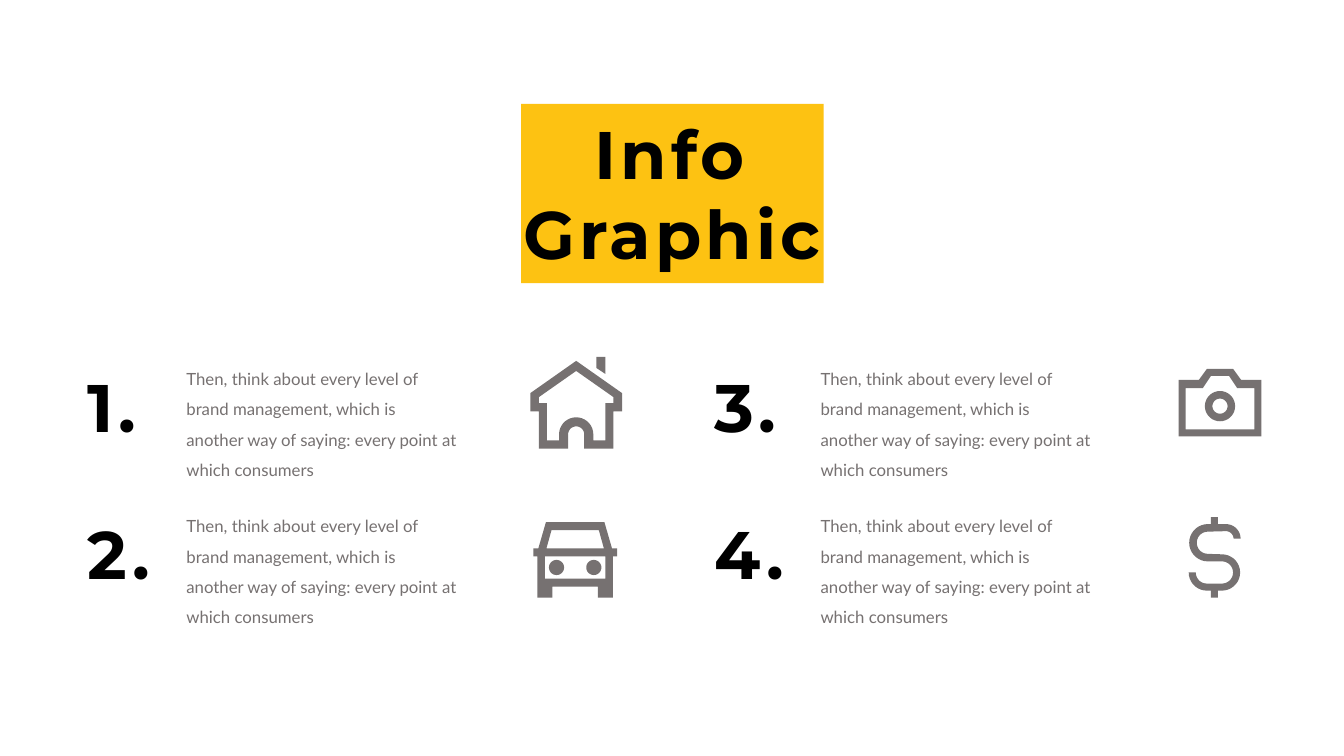
import math
from dataclasses import dataclass

from pptx import Presentation
from pptx import util as u
from pptx.dml.color import RGBColor
from pptx.enum import shapes, text

Point = tuple[float, float]
Contour = list[Point]


@dataclass(frozen=True)
class Theme:
    black: str = "000000"
    grey: str = "767171"
    yellow: str = "FDC212"
    heading_font: str = "Montserrat"
    body_font: str = "Lato"
    heading_size: int = 48
    body_size: int = 12
    heading_tracking: int = 300  # hundredths of a point


@dataclass(frozen=True)
class Icon:
    center_x: float
    top: float
    contours: list[Contour]  # relative to the centre of the top edge


@dataclass(frozen=True)
class Entry:
    label: str
    column: int
    row: int
    label_width: float
    icon: Icon


THEME = Theme()
BODY = ("Then, think about every level of brand management, which is "
        "another way of saying: every point at which consumers")
LABEL_LEFTS = (0.77, 6.99)
BODY_LEFTS = (1.75, 8.04)
LABEL_TOP, BODY_TOP, ROW_STEP = 3.57, 3.51, 1.46


# Outline helpers
def arc(x: float, y: float, radius: float, start: int, end: int) -> Contour:
    steps = max(abs(end - start) // 10, 1)
    angles = [math.radians(start + (end - start) * step / steps) for step in range(steps + 1)]
    return [(x + radius * math.cos(a), y + radius * math.sin(a)) for a in angles]


def circle(x: float, y: float, radius: float) -> Contour:
    return arc(x, y, radius, 0, 360)


def mirrored(right_half: Contour) -> Contour:
    return right_half + [(-x, y) for x, y in reversed(right_half)]


# Icons
HOUSE = Icon(5.715, 3.54, [
    [(0.2, 0), (0.2, 0.11), (0.29, 0.17), (0.29, 0)],
    mirrored([(0, 0.14), (0.37, 0.4), (0.37, 0.46), (0.29, 0.46), (0.29, 0.83), (0.17, 0.83),
              *arc(0, 0.77, 0.17, 0, -90)]),
    mirrored([(0, 0.04), (0.455, 0.36), (0.455, 0.54), (0.37, 0.54), (0.37, 0.91), (0.08, 0.91),
              *arc(0, 0.77, 0.08, 0, -90)]),
])
CAR = Icon(5.705, 5.18, [
    mirrored([(0.235, 0.08), (0.285, 0.26)]),
    circle(-0.185, 0.45, 0.075),
    circle(0.185, 0.45, 0.075),
    mirrored([(0.3, 0.34), (0.3, 0.56)]),
    mirrored([(0.29, 0), (0.365, 0.26), (0.415, 0.26), (0.415, 0.34), (0.375, 0.34),
              (0.375, 0.75), (0.225, 0.75), (0.225, 0.64)]),
])
CAMERA = Icon(12.1, 3.66, [
    circle(0, 0.37, 0.075),
    circle(0, 0.37, 0.15),
    mirrored([(0.09, 0.07), (0.17, 0.19), (0.34, 0.19), (0.34, 0.6)]),
    mirrored([(0.13, 0), (0.21, 0.11), (0.41, 0.11), (0.41, 0.67)]),
])
DOLLAR = Icon(12.045, 5.13, [[
    (-0.035, 0), (-0.035, 0.07),
    *arc(-0.065, 0.255, 0.185, -90, -270),
    *arc(0.075, 0.55, 0.11, -90, 90),
    *arc(-0.075, 0.55, 0.11, 90, 180),
    *arc(-0.075, 0.55, 0.18, 180, 90),
    (-0.035, 0.73), (-0.035, 0.8), (0.035, 0.8), (0.035, 0.73),
    *arc(0.075, 0.55, 0.18, 90, -90),
    *arc(-0.065, 0.255, 0.11, 90, 270),
    *arc(0.115, 0.215, 0.075, -90, 0),
    *arc(0.115, 0.215, 0.145, 0, -90),
    (0.035, 0.07), (0.035, 0),
]])

ENTRIES = [
    Entry("1.", 0, 0, 0.89, HOUSE),
    Entry("2.", 0, 1, 1.12, CAR),
    Entry("3.", 1, 0, 1.05, CAMERA),
    Entry("4.", 1, 1, 1.12, DOLLAR),
]


# Drawing functions
def paint(shape, color: str) -> None:
    shape.shadow.inherit = False
    shape.fill.solid()
    shape.fill.fore_color.rgb = RGBColor.from_string(color)
    shape.line.fill.background()


def write(shape, content: str, heading: bool) -> None:
    frame = shape.text_frame
    frame.text = content
    frame.word_wrap = True
    frame.auto_size = text.MSO_AUTO_SIZE.SHAPE_TO_FIT_TEXT
    frame.vertical_anchor = text.MSO_ANCHOR.TOP
    paragraph = frame.paragraphs[0]
    run = paragraph.runs[0]
    run.font.name = THEME.heading_font if heading else THEME.body_font
    run.font.size = u.Pt(THEME.heading_size if heading else THEME.body_size)
    run.font.bold = heading
    run.font.color.rgb = RGBColor.from_string(THEME.black if heading else THEME.grey)
    if heading:
        run._r.get_or_add_rPr().set("spc", str(THEME.heading_tracking))
    else:
        paragraph.line_spacing = 1.5


def add_text(slide, left: float, top: float, width: float, height: float,
             content: str, heading: bool) -> None:
    box = slide.shapes.add_textbox(*map(u.Inches, (left, top, width, height)))
    write(box, content, heading)


def draw_icon(slide, icon: Icon) -> None:
    outlines = [[(u.Inches(icon.center_x + x), u.Inches(icon.top + y)) for x, y in contour]
                for contour in icon.contours]
    builder = slide.shapes.build_freeform(*outlines[0][0])
    for index, points in enumerate(outlines):
        if index:
            builder.move_to(*points[0])
        builder.add_line_segments(points[1:], close=True)
    paint(builder.convert_to_shape(), THEME.grey)


def draw_entry(slide, entry: Entry) -> None:
    offset = entry.row * ROW_STEP
    add_text(slide, LABEL_LEFTS[entry.column], LABEL_TOP + offset, entry.label_width, 0.91,
             entry.label, heading=True)
    add_text(slide, BODY_LEFTS[entry.column], BODY_TOP + offset, 2.88, 1.31, BODY, heading=False)
    draw_icon(slide, entry.icon)


def draw_title(slide) -> None:
    title = slide.shapes.title
    title.left, title.top, title.width, title.height = map(u.Inches, (4.87, 1.06, 3.59, 1.72))
    write(title, "Info Graphic", heading=True)
    title.text_frame.paragraphs[0].alignment = text.PP_ALIGN.CENTER
    panel = slide.shapes.add_shape(shapes.MSO_SHAPE.RECTANGLE,
                                   *map(u.Inches, (5.17, 1.03, 3, 1.78)))
    paint(panel, THEME.yellow)
    title.element.addprevious(panel.element)  # the panel lies behind the title


def main() -> None:
    presentation = Presentation()
    presentation.slide_width = u.Inches(13.33)
    presentation.slide_height = u.Inches(7.5)
    slide = presentation.slides.add_slide(presentation.slide_layouts[5])
    draw_title(slide)
    for entry in ENTRIES:
        draw_entry(slide, entry)
    presentation.save("out.pptx")


if __name__ == "__main__":
    main()
